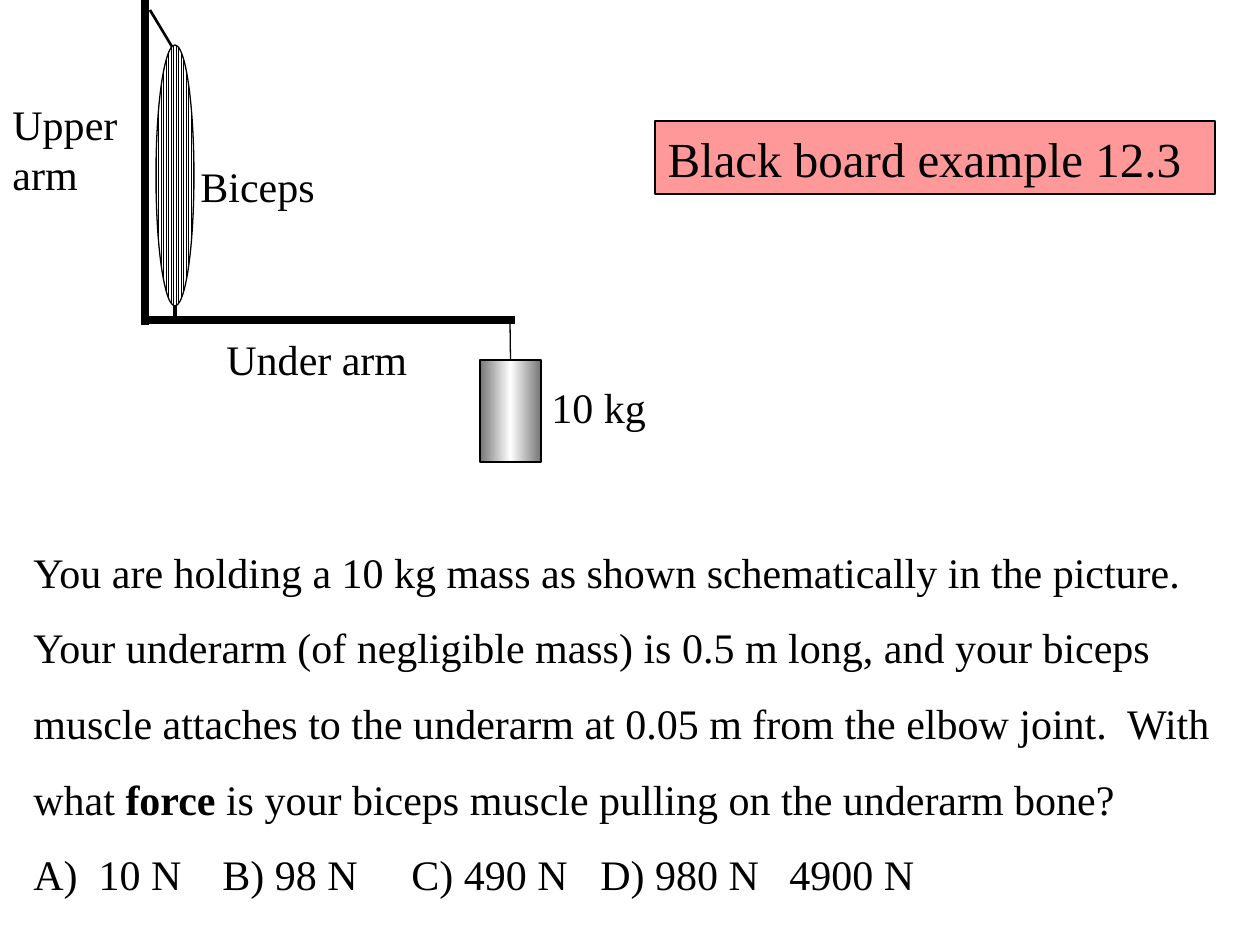
from copy import deepcopy

from lxml.etree import SubElement
from pptx import Presentation
from pptx.dml.color import RGBColor
from pptx.enum.dml import MSO_PATTERN
from pptx.enum.shapes import MSO_CONNECTOR, MSO_SHAPE
from pptx.enum.text import MSO_ANCHOR, MSO_AUTO_SIZE, PP_ALIGN
from pptx.oxml.ns import qn
from pptx.util import Emu, Pt

FONT = "Times New Roman"
INK = "000000"
PAPER = "FFFFFF"


def px(n):
    return Emu(round(n * 914400 / 126))


def color(code):
    return RGBColor.from_string(code)


def style(para, size=24):
    font = para.font
    font.name, font.size = FONT, Pt(size)
    font.color.rgb = color(INK)


def edge(shape, width=0.75):
    shape.line.color.rgb = color(INK)
    shape.line.width = Pt(width)


def add_text(shapes, box, text=""):
    shape = shapes.add_textbox(*map(px, box))
    frame = shape.text_frame
    frame.word_wrap = True
    frame.text = text
    style(frame.paragraphs[0])
    return frame


def add_line(shapes, start, end, width):
    line = shapes.add_connector(
        MSO_CONNECTOR.STRAIGHT, *map(px, start + end))
    edge(line, width)
    SubElement(line._element.spPr, qn("a:effectLst"))
    return line


def add_form(shapes, kind, box):
    form = shapes.add_shape(kind, *map(px, box))
    form.shadow.inherit = False
    edge(form)
    return form


def add_muscle(shapes, box):
    fill = add_form(shapes, MSO_SHAPE.OVAL, box).fill
    fill.patterned()
    fill.pattern = MSO_PATTERN.NARROW_VERTICAL
    fill.fore_color.rgb = color(INK)
    fill.back_color.rgb = color(PAPER)


def add_weight(shapes, box):
    form = add_form(shapes, MSO_SHAPE.RECTANGLE, box)
    fill = form.fill
    fill.gradient()
    fill.gradient_angle = 0
    stops = form._element.spPr.find(".//" + qn("a:gsLst"))
    stops.append(deepcopy(stops[0]))
    shades = ("767676", PAPER, "767676")
    for i, (stop, shade) in enumerate(zip(fill.gradient_stops, shades)):
        stop.position = i / 2
        stop.color.rgb = color(shade)
    return form


def draw_arm(slide, x, y):
    """Draw the arm, its muscle and the load from the corner x, y."""
    shapes = slide.shapes.add_group_shape().shapes
    lines = [
        ((175, 290), (175, 318), 2.25),  # lower tendon
        ((145, 0), (145, 325), 4.5),     # upper arm
        ((142, 320), (515, 320), 4.5),   # underarm
        ((174, 50), (150, 10), 1.5),     # upper tendon
    ]
    for (x1, y1), (x2, y2), width in lines:
        add_line(shapes, (x + x1, y + y1), (x + x2, y + y2), width)
    add_muscle(shapes, (x + 156, y + 45, 38, 261))
    weight = add_weight(shapes, (x + 480, y + 360, 61, 102))
    cord = add_line(shapes, (x + 510, y + 318), (x + 510, y + 360), 0.75)
    cord.end_connect(weight, 0)

    labels = [
        ("Upper arm", 0, 92, 159, 116),
        ("Under arm", 214, 327, 256, 116),
        ("10 kg", 539, 375, 178, 97),
        ("Biceps", 188, 154, 256, 116),
    ]
    for text, left, top, wide, high in labels:
        add_text(shapes, (x + left, y + top, wide, high), text)


def fill_title(slide, box):
    title = slide.shapes.title
    title.left, title.top, title.width, title.height = map(px, box)
    title.fill.solid()
    title.fill.fore_color.rgb = color("FF9999")
    edge(title)
    frame = title.text_frame
    frame.text = "Black board example 12.3"
    frame.auto_size = MSO_AUTO_SIZE.NONE
    frame.vertical_anchor = MSO_ANCHOR.MIDDLE
    para = frame.paragraphs[0]
    para.alignment = PP_ALIGN.LEFT
    style(para, 28)


def add_question(slide, box):
    frame = add_text(slide.shapes, box)
    frame.vertical_anchor = MSO_ANCHOR.MIDDLE
    ask = frame.paragraphs[0]
    parts = (
        "You are holding a 10 kg mass as shown schematically in the "
        "picture.  Your underarm (of negligible mass) is 0.5 m long, and "
        "your biceps muscle attaches to the underarm at 0.05 m from the "
        "elbow joint.  With what ",
        "force",
        " is your biceps muscle pulling on the underarm bone?",
    )
    for part in parts:
        run = ask.add_run()
        run.text = part
        run.font.bold = part == "force"
    picks = frame.add_paragraph()
    picks.text = "\t".join(
        ("A)  10 N", "B) 98 N", "C) 490 N", "D) 980 N", "4900 N"))
    style(picks)
    for para in frame.paragraphs:
        para.line_spacing = 1.5


def main():
    deck = Presentation()
    deck.slide_width, deck.slide_height = px(1260), px(945)
    slide = deck.slides.add_slide(deck.slide_layouts.get_by_name("Title Only"))
    fill_title(slide, (655, 121, 560, 73))
    add_question(slide, (21, 513, 1217, 394))
    draw_arm(slide, 0, 0)
    deck.save("out.pptx")


if __name__ == "__main__":
    main()
